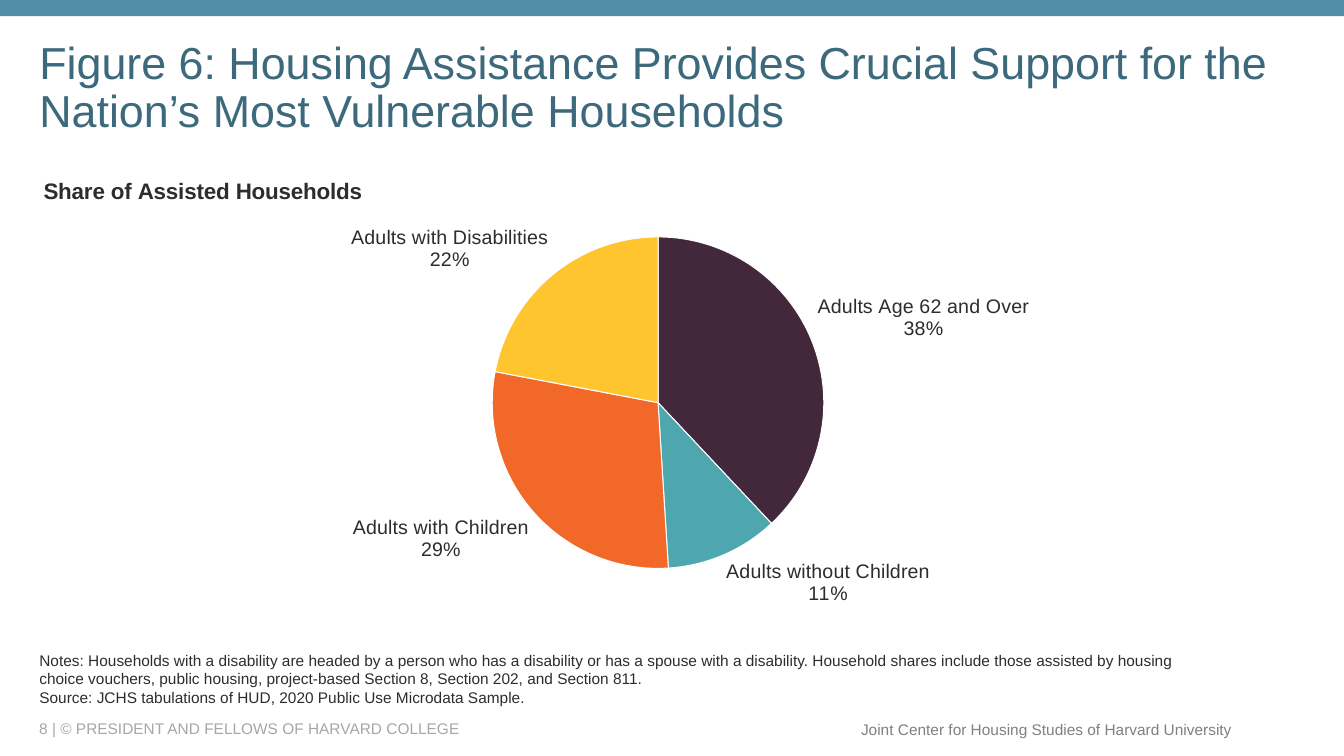
from lxml.etree import SubElement
from pptx import Presentation
from pptx.chart.data import CategoryChartData
from pptx.dml.color import RGBColor
from pptx.enum.chart import XL_CHART_TYPE, XL_LABEL_POSITION
from pptx.enum.shapes import MSO_SHAPE
from pptx.enum.text import MSO_ANCHOR, MSO_AUTO_SIZE, PP_ALIGN
from pptx.oxml import parse_xml
from pptx.oxml.ns import nsdecls, qn
from pptx.util import Inches, Pt

# Content
TITLE = ("Figure 6: Housing Assistance Provides Crucial Support for the "
         "Nation’s Most Vulnerable Households")
CHART_TITLE = "Share of Assisted Households"
SHARES = [  # category, percent, colour name
    ("Adults Age 62 and Over", 38, "plum"),
    ("Adults without Children", 11, "teal"),
    ("Adults with Children", 29, "orange"),
    ("Adults with Disabilities", 22, "yellow"),
]
NOTES = [
    "Notes: Households with a disability are headed by a person who has a disability "
    "or has a spouse with a disability. Household shares include those assisted by "
    "housing choice vouchers, public housing, project-based Section 8, Section 202, "
    "and Section 811.",
    "Source: JCHS tabulations of HUD, 2020 Public Use Microdata Sample.",
]
COPYRIGHT = "8 | © PRESIDENT AND FELLOWS OF HARVARD COLLEGE"
CENTER_NAME = "Joint Center for Housing Studies of Harvard University"

FONT = "Arial"
COLORS = {
    "band": "508DA6", "title": "3C6A7C", "text": "2D2D2D", "white": "FFFFFF",
    "light gray": "A6A6A6", "gray": "808080",
    "plum": "43273B", "teal": "4EA7AF", "orange": "F26829", "yellow": "FFC52F",
}
LEFT, WIDTH = 0.29, 12.65


def color(name):
    return RGBColor.from_string(COLORS[name])


def style_font(font, size, color_name, bold=False):
    font.name, font.size, font.bold = FONT, Pt(size), bold
    font.color.rgb = color(color_name)


def fill_text(shape, box, lines, size, color_name, anchor=MSO_ANCHOR.MIDDLE,
              align=PP_ALIGN.LEFT, wrap=True, line_spacing=1.0):
    """Place a text shape, write its paragraphs and format their runs."""
    shape.left, shape.top, shape.width, shape.height = map(Inches, box)
    frame = shape.text_frame
    frame.text = "\n".join(lines)
    frame.word_wrap, frame.auto_size = wrap, MSO_AUTO_SIZE.NONE
    frame.vertical_anchor = anchor
    for paragraph in frame.paragraphs:
        paragraph.alignment = align
        paragraph.line_spacing = line_spacing
        paragraph.space_before = Pt(0)
        for run in paragraph.runs:
            style_font(run.font, size, color_name)


def manual_layout(x, y, width=None, height=None):
    """Build a chart layout from fractions of the chart area."""
    layout = parse_xml(f"<c:layout {nsdecls('c')}><c:manualLayout/></c:layout>")
    values = [("xMode", "edge"), ("yMode", "edge"), ("x", x), ("y", y)]
    if width:
        values = [("layoutTarget", "inner")] + values + [("w", width), ("h", height)]
    for tag, value in values:
        SubElement(layout[0], qn(f"c:{tag}")).set("val", str(value))
    return layout


presentation = Presentation()
presentation.slide_width, presentation.slide_height = Inches(13.33), Inches(7.5)
slide = presentation.slides.add_slide(presentation.slide_layouts[1])
title, notes = slide.placeholders

# Top band
band = slide.shapes.add_shape(MSO_SHAPE.RECTANGLE, 0, 0,
                              presentation.slide_width, Inches(0.16))
band.shadow.inherit = False
band.fill.solid()
band.fill.fore_color.rgb = color("band")
band.line.fill.background()

# Title and notes
fill_text(title, (LEFT, 0.4, WIDTH, 0.97), [TITLE], 32, "title", line_spacing=0.9)
fill_text(notes, (LEFT, 6.48, 11.75, 0.58), NOTES, 11, "text", MSO_ANCHOR.BOTTOM)
for paragraph in notes.text_frame.paragraphs:
    properties = paragraph._p.get_or_add_pPr()
    properties.set("marL", "0")
    properties.set("indent", "0")
    SubElement(properties, qn("a:buNone"))

# Footer
for box, line, color_name, align, wrap in [
    ((LEFT, 7.13, 7.92, 0.2), COPYRIGHT, "light gray", PP_ALIGN.LEFT, True),
    ((8.42, 7.09, 3.9, 0.29), CENTER_NAME, "gray", PP_ALIGN.RIGHT, False),
]:
    footer = slide.shapes.add_textbox(0, 0, 0, 0)
    fill_text(footer, box, [line], 11, color_name, align=align, wrap=wrap)

# Pie chart
chart_data = CategoryChartData(number_format="0")
chart_data.categories = [category for category, _, _ in SHARES]
chart_data.add_series("Series 1", [share for _, share, _ in SHARES])
chart = slide.shapes.add_chart(
    XL_CHART_TYPE.PIE, Inches(LEFT), Inches(1.55), Inches(WIDTH), Inches(4.68),
    chart_data).chart
chart.has_legend = False
style_font(chart.font, 14, "text")

chart.has_title = True
chart_title = chart.chart_title
chart_title.text_frame.text = CHART_TITLE
style_font(chart_title.text_frame.paragraphs[0].runs[0].font, 16, "text", bold=True)
chart_title.include_in_layout = False
title_element = chart_title._element
for layout in title_element.findall(qn("c:layout")):
    title_element.remove(layout)
title_element.find(qn("c:tx")).addnext(manual_layout(0.008, 0.035))

plot = chart.plots[0]
plot.vary_by_categories = True
plot_area = plot._element.getparent()
for layout in plot_area.findall(qn("c:layout")):
    plot_area.remove(layout)
plot_area.insert(0, manual_layout(0.363, 0.171, 0.26, 0.703))

# Slices and their labels
series = plot.series[0]
for index, (_, _, color_name) in enumerate(SHARES):
    slice_format = series.points[index].format
    slice_format.fill.solid()
    slice_format.fill.fore_color.rgb = color(color_name)
    slice_format.line.color.rgb = color("white")
    slice_format.line.width = Pt(0.75)

labels = series.data_labels
labels.show_value = False
labels.show_category_name = labels.show_percentage = True
labels.number_format, labels.number_format_is_linked = "0%", False
labels.position = XL_LABEL_POSITION.OUTSIDE_END
style_font(labels.font, 14, "text")
separator = parse_xml(f"<c:separator {nsdecls('c')}>\n</c:separator>")
labels._element.find(qn("c:showBubbleSize")).addnext(separator)

presentation.save("out.pptx")
